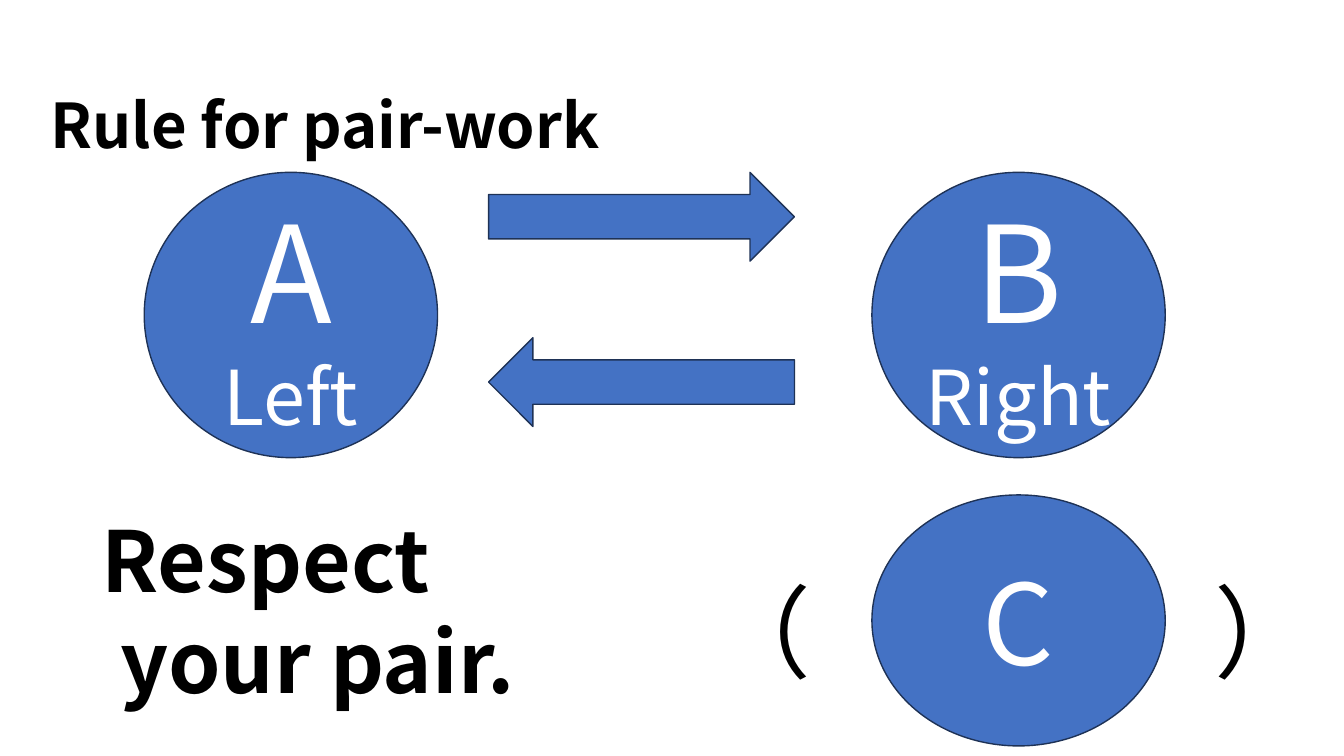
import dataclasses

import pptx
import pptx.dml.color
import pptx.enum.shapes
import pptx.enum.text
import pptx.oxml
import pptx.oxml.ns
import pptx.util

Pt = pptx.util.Pt
RGB = pptx.dml.color.RGBColor
SHAPES = pptx.enum.shapes.MSO_SHAPE
ALIGN = pptx.enum.text.PP_ALIGN
ANCHOR = pptx.enum.text.MSO_ANCHOR


@dataclasses.dataclass(frozen=True)
class Theme:
    """Colours, font and type sizes of the slide."""
    font: str = "Noto Sans CJK JP"
    ink: RGB = RGB(0, 0, 0)
    paper: RGB = RGB(255, 255, 255)
    fill: RGB = RGB(0x44, 0x72, 0xC4)
    outline: RGB = RGB(0x1E, 0x32, 0x56)
    title: int = 44
    letter: int = 96
    spare_letter: int = 80
    side: int = 54
    bracket: int = 72
    motto: int = 60


THEME = Theme()


def write(frame, lines, color, align=ALIGN.LEFT, bold=False):
    """Fill a text frame with (text, size) lines."""
    frame.word_wrap = True
    for index, (text, size) in enumerate(lines):
        paragraph = frame.paragraphs[0] if index == 0 else frame.add_paragraph()
        paragraph.text = text
        paragraph.alignment = align
        paragraph.font.name = THEME.font
        paragraph.font.size = Pt(size)
        paragraph.font.bold = bold
        paragraph.font.color.rgb = color


def add_title(slide, text, left, top, width, height):
    """Place and format the title placeholder."""
    title = slide.shapes.title
    title.left, title.top = Pt(left), Pt(top)
    title.width, title.height = Pt(width), Pt(height)
    title.text_frame.vertical_anchor = ANCHOR.MIDDLE
    write(title.text_frame, [(text, THEME.title)], THEME.ink, bold=True)
    title.text_frame.paragraphs[0].line_spacing = 0.9


def add_figure(slide, kind, left, top, width, height, lines=()):
    """Add a blue outlined shape with optional centred text."""
    figure = slide.shapes.add_shape(kind, Pt(left), Pt(top), Pt(width), Pt(height))
    figure.shadow.inherit = False
    figure.fill.solid()
    figure.fill.fore_color.rgb = THEME.fill
    figure.line.color.rgb = THEME.outline
    figure.line.width = Pt(1)
    figure.text_frame.vertical_anchor = ANCHOR.MIDDLE
    write(figure.text_frame, lines, THEME.paper, ALIGN.CENTER)


def add_text(slide, lines, left, top, width, height, bold=False):
    """Add a wrapped text box and return its frame."""
    box = slide.shapes.add_textbox(Pt(left), Pt(top), Pt(width), Pt(height))
    write(box.text_frame, lines, THEME.ink, bold=bold)
    return box.text_frame


def add_tab_stop(paragraph, position):
    """Set one left tab stop on a paragraph."""
    properties = paragraph._p.get_or_add_pPr()
    stops = pptx.oxml.parse_xml(
        f'<a:tabLst {pptx.oxml.ns.nsdecls("a")}>'
        f'<a:tab pos="{Pt(position)}" algn="l"/></a:tabLst>')
    properties.insert_element_before(stops, "a:defRPr", "a:extLst")


def main():
    """Build and save the pair-work slide."""
    deck = pptx.Presentation()
    deck.slide_width, deck.slide_height = Pt(960), Pt(540)
    slide = deck.slides.add_slide(deck.slide_layouts[5])
    add_title(slide, "Rule for pair-work", 28.8, 18.7, 828, 146.2)

    pair_top, circle_width, right_column = 123.1, 209.5, 622.8
    for left, letter, side in ((103, "A", "Left"), (right_column, "B", "Right")):
        add_figure(slide, SHAPES.OVAL, left, pair_top, circle_width, 203.8,
                   [(letter, THEME.letter), (side, THEME.side)])
    add_figure(slide, SHAPES.OVAL, right_column, 353.5, circle_width, 179.3,
               [("C", THEME.spare_letter)])

    brackets = add_text(slide, [("（\t）", THEME.bracket)], 500.4, 403.2, 460, 94.3)
    add_tab_stop(brackets.paragraphs[0], 5 * THEME.bracket)

    for kind, top in ((SHAPES.RIGHT_ARROW, pair_top), (SHAPES.LEFT_ARROW, 241.2)):
        add_figure(slide, kind, 349, top, 218.5, 63.4)

    add_text(slide, [("Respect", THEME.motto), (" your pair.", THEME.motto)],
             65.5, 360, 414.7, 174.2, bold=True)
    deck.save("out.pptx")


if __name__ == "__main__":
    main()
